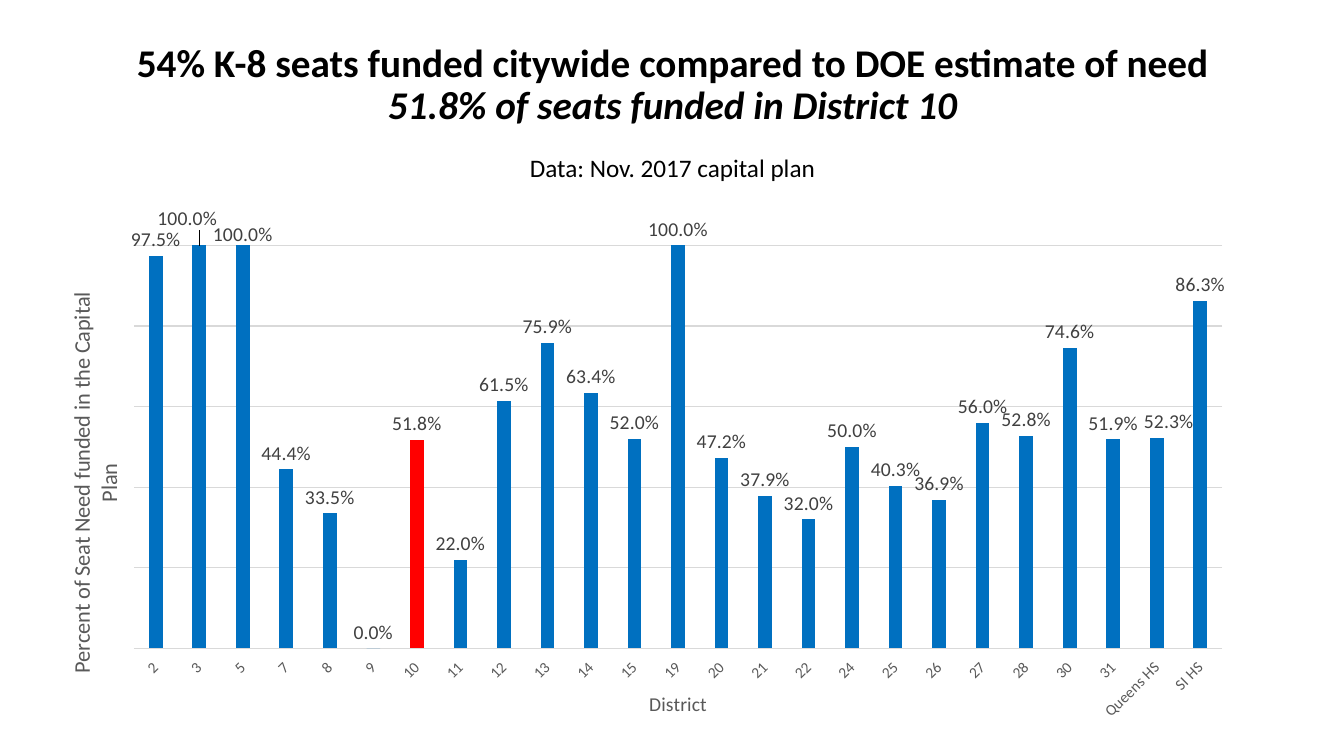
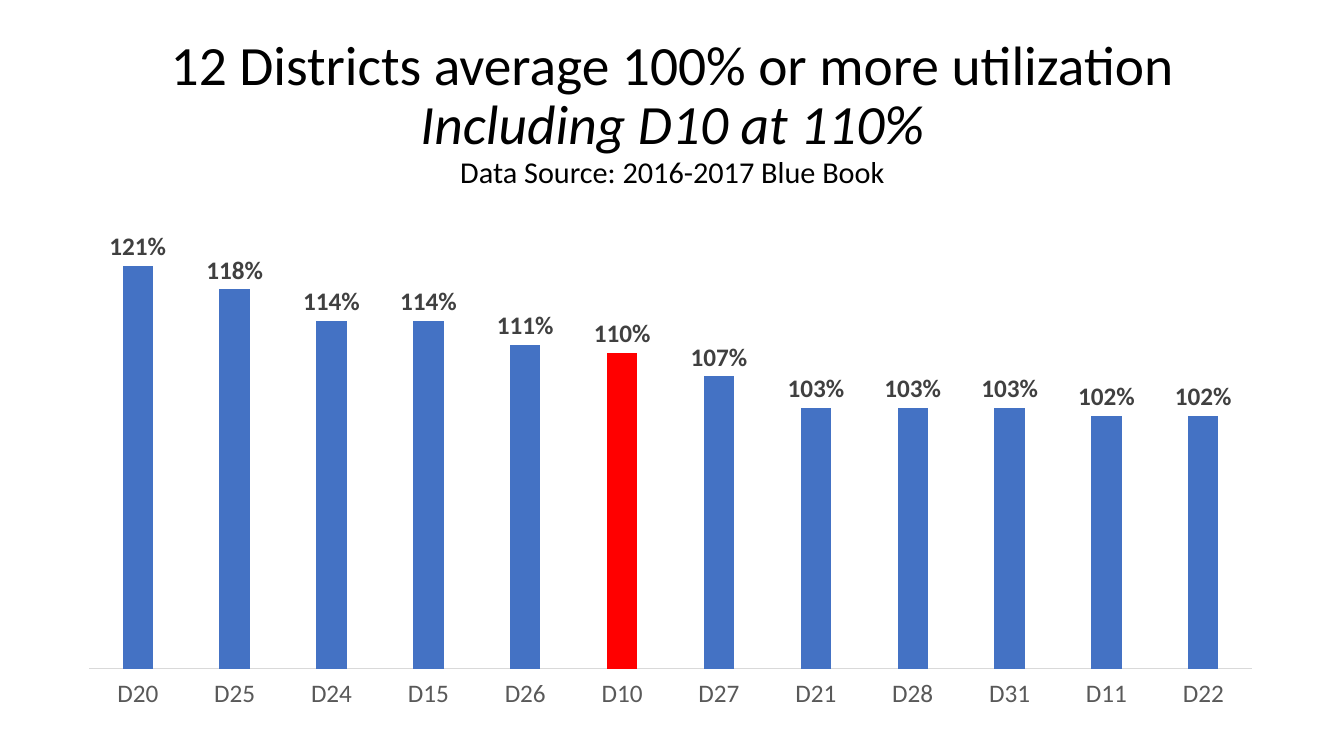
"""Build two slides that chart school seat funding and use by district."""
from dataclasses import dataclass

from lxml.etree import SubElement
from pptx import Presentation
from pptx.chart.data import CategoryChartData
from pptx.dml.color import RGBColor
from pptx.enum.chart import XL_CHART_TYPE as Kind
from pptx.enum.chart import XL_LABEL_POSITION as Spot
from pptx.enum.chart import XL_TICK_LABEL_POSITION as TickSpot
from pptx.enum.chart import XL_TICK_MARK as Tick
from pptx.enum.text import MSO_ANCHOR, PP_ALIGN
from pptx.oxml.ns import qn
from pptx.util import Inches, Pt

FACE = "Calibri"
BLACK = RGBColor(0x00, 0x00, 0x00)
WHITE = RGBColor(0xFF, 0xFF, 0xFF)
DARK = RGBColor(0x40, 0x40, 0x40)
GRAY = RGBColor(0x59, 0x59, 0x59)
PALE = RGBColor(0xD9, 0xD9, 0xD9)
RED = RGBColor(0xFF, 0x00, 0x00)
DEEP = RGBColor(0x00, 0x70, 0xC0)
BLUE = RGBColor(0x44, 0x72, 0xC4)


@dataclass(frozen=True)
class Line:
    """One line of a heading."""
    text: str
    size: float
    bold: bool = False
    slant: bool = False
    gap: float = 0


@dataclass(frozen=True)
class Graph:
    """A column chart and the look of its parts."""
    box: tuple[float, float, float, float]
    plot: tuple[float, float, float, float]
    names: list[str]
    rates: list[float]
    hot: str
    color: RGBColor
    form: str
    low: float
    high: float
    tick_size: float
    mark_size: float
    bold: bool = False


def set_font(font, size: float, color: RGBColor, bold: bool = False) -> None:
    """Set face, size, colour and weight."""
    font.name, font.size, font.bold = FACE, Pt(size), bold
    font.color.rgb = color


def set_layout(node, index: int, **parts) -> None:
    """Give a chart part a manual layout."""
    layout = node.find(qn("c:layout"))
    if layout is None:
        layout = SubElement(node, qn("c:layout"))
        node.insert(index, layout)
    manual = SubElement(layout, qn("c:manualLayout"))
    for tag, value in parts.items():
        SubElement(manual, qn(f"c:{tag}")).set("val", str(value))


def add_head(slide, top: float, height: float, lines: list[Line]):
    """Add a centred heading and return its box."""
    box = slide.shapes.add_textbox(Inches(0.92), Inches(top), Inches(11.5), Inches(height))
    frame = box.text_frame
    frame.word_wrap = True
    frame.vertical_anchor = MSO_ANCHOR.MIDDLE
    for i, line in enumerate(lines):
        para = frame.add_paragraph() if i else frame.paragraphs[0]
        para.text = line.text
        para.alignment = PP_ALIGN.CENTER
        para.line_spacing = 0.9
        para.space_before = Pt(line.gap)
        set_font(para.font, line.size, BLACK, line.bold)
        para.font.italic = line.slant
    return box


def add_graph(slide, graph: Graph):
    """Add a column chart with one column picked out."""
    data = CategoryChartData(number_format=graph.form)
    data.categories = graph.names
    data.add_series("Series 1", [round(rate / 100, 3) for rate in graph.rates])
    box = [Inches(side) for side in graph.box]
    chart = slide.shapes.add_chart(Kind.COLUMN_CLUSTERED, *box, data).chart
    chart.has_legend = chart.has_title = False
    set_font(chart.font, 10, BLACK)
    left, top, width, height = graph.plot
    set_layout(chart.element.xpath(".//c:plotArea")[0], 0, layoutTarget="inner",
               xMode="edge", yMode="edge", x=left, y=top, w=width, h=height)

    plot = chart.plots[0]
    plot.gap_width, plot.overlap, plot.vary_by_categories = 219, -27, False
    bars = plot.series[0]
    bars.invert_if_negative = False
    bars.format.fill.solid()
    bars.format.fill.fore_color.rgb = graph.color
    fill = bars.points[graph.names.index(graph.hot)].format.fill
    fill.solid()
    fill.fore_color.rgb = RED

    marks = bars.data_labels
    marks.show_value = True
    marks.position = Spot.OUTSIDE_END
    marks.number_format, marks.number_format_is_linked = graph.form, False
    set_font(marks.font, graph.mark_size, DARK, graph.bold)

    base, scale = chart.category_axis, chart.value_axis
    base.major_tick_mark = base.minor_tick_mark = Tick.NONE
    base.tick_label_position = TickSpot.LOW
    base.format.line.color.rgb = PALE
    base.format.line.width = Pt(0.75)
    set_font(base.tick_labels.font, graph.tick_size, GRAY)
    scale.visible = scale.has_major_gridlines = False
    scale.minimum_scale, scale.maximum_scale = graph.low, graph.high
    return chart


def name_axis(axis, text: str, size: float) -> None:
    """Give an axis its title."""
    para = axis.axis_title.text_frame.paragraphs[0]
    para.text = text
    set_font(para.font, size, GRAY)


def shift_mark(chart, graph: Graph, name: str, right: float, down: float) -> None:
    """Move one value label by a share of the chart size."""
    index = graph.names.index(name)
    mark = chart.plots[0].series[0].points[index].data_label
    set_font(mark.font, graph.mark_size, DARK)
    mark.position = Spot.OUTSIDE_END
    node = chart.element.xpath(f".//c:dLbl[c:idx/@val='{index}']")[0]
    form = SubElement(node, qn("c:numFmt"), formatCode=graph.form, sourceLinked="0")
    node.insert(1, form)
    set_layout(node, 1, x=right, y=down)


FUNDS = Graph(
    box=(0.38, 1.91, 11.86, 5.26), plot=(0.08, 0.1, 0.91, 0.76),
    names=["2", "3", "5", "7", "8", "9", "10", "11", "12", "13", "14", "15", "19",
           "20", "21", "22", "24", "25", "26", "27", "28", "30", "31",
           "Queens HS", "SI HS"],
    rates=[97.5, 100, 100, 44.4, 33.5, 0, 51.8, 22, 61.5, 75.9, 63.4, 52, 100,
           47.2, 37.9, 32, 50, 40.3, 36.9, 56, 52.8, 74.6, 51.9, 52.3, 86.3],
    hot="10", color=DEEP, form="0.0%", low=0, high=1, tick_size=11, mark_size=14)

USE = Graph(
    box=(0.53, 1.93, 11.89, 5.17), plot=(0.03, 0, 0.97, 0.91),
    names=["D20", "D25", "D24", "D15", "D26", "D10", "D27", "D21", "D28", "D31",
           "D11", "D22"],
    rates=[121, 118, 114, 114, 111, 110, 107, 103, 103, 103, 102, 102],
    hot="D10", color=BLUE, form="0%", low=0.7, high=1.3, tick_size=18, mark_size=18,
    bold=True)


def draw_funds(slide) -> None:
    """Draw the slide on funded seats."""
    chart = add_graph(slide, FUNDS)
    base, scale = chart.category_axis, chart.value_axis
    name_axis(base, "District", 14)
    name_axis(scale, "Percent of Seat Need funded in the Capital Plan", 16)
    scale.major_unit = 0.2
    grid = scale.major_gridlines.format.line
    grid.color.rgb, grid.width = PALE, Pt(0.75)
    root = chart.element
    root.xpath(".//c:catAx/c:txPr/a:bodyPr")[0].set("rot", "-2700000")
    title = root.xpath(".//c:valAx/c:title")[0]
    body = title.xpath(".//a:bodyPr")[0]
    body.set("rot", "-5400000")
    body.set("vert", "horz")
    set_layout(title, 1, xMode="edge", yMode="edge", x=0.02, y=0.18)
    for name, right, down in (("3", -0.01, -0.02), ("5", 0, 0.01), ("Queens HS", 0.01, 0)):
        shift_mark(chart, FUNDS, name, right, down)
    head = add_head(slide, 0.38, 1.49, [
        Line("54% K-8 seats funded citywide compared to DOE estimate of need", 28, bold=True),
        Line("51.8% of seats funded in District 10", 28, bold=True, slant=True),
        Line("Data: Nov. 2017 capital plan", 18, gap=20)])
    head.fill.solid()
    head.fill.fore_color.rgb = WHITE


def draw_use(slide) -> None:
    """Draw the slide on building use."""
    add_head(slide, 0.4, 1.45, [
        Line("12 Districts average 100% or more utilization", 39.6),
        Line("Including D10 at 110%", 39.6, slant=True),
        Line("Data Source: 2016-2017 Blue Book", 21.6)])
    add_graph(slide, USE)


def main() -> None:
    """Build and save the deck."""
    deck = Presentation()
    deck.slide_width, deck.slide_height = Inches(13.33), Inches(7.5)
    for draw in (draw_funds, draw_use):
        draw(deck.slides.add_slide(deck.slide_layouts[6]))
    deck.save("out.pptx")


if __name__ == "__main__":
    main()
